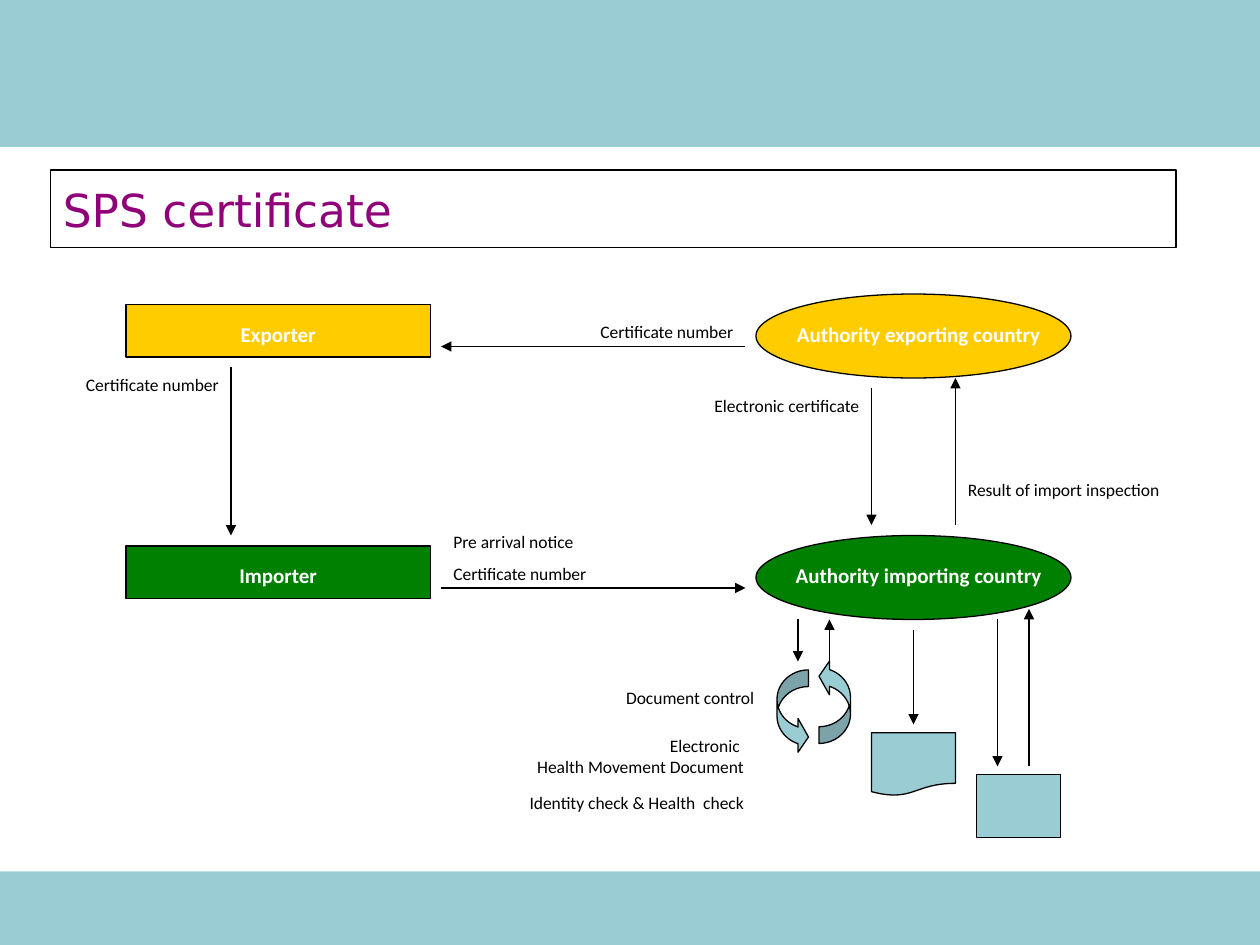
from lxml import etree
from pptx import Presentation
from pptx.dml.color import RGBColor
from pptx.enum.shapes import MSO_CONNECTOR, MSO_SHAPE
from pptx.enum.text import MSO_ANCHOR, MSO_AUTO_SIZE, PP_ALIGN
from pptx.oxml.ns import qn
from pptx.util import Inches, Pt

RECTANGLE, OVAL = MSO_SHAPE.RECTANGLE, MSO_SHAPE.OVAL
CURVED_ARROW = MSO_SHAPE.CURVED_RIGHT_ARROW
DOCUMENT, PROCESS = MSO_SHAPE.FLOWCHART_DOCUMENT, MSO_SHAPE.FLOWCHART_PROCESS
STRAIGHT = MSO_CONNECTOR.STRAIGHT
LEFT, CENTER, RIGHT = PP_ALIGN.LEFT, PP_ALIGN.CENTER, PP_ALIGN.RIGHT
MIDDLE, FIT_SHAPE = MSO_ANCHOR.MIDDLE, MSO_AUTO_SIZE.SHAPE_TO_FIT_TEXT

COLORS = {
    "band": "9ACCD4", "export": "FFCC00", "import": "008000",
    "ink": "000000", "paper": "FFFFFF", "title": "900079",
}
COLORS = {name: RGBColor.from_string(code) for name, code in COLORS.items()}

deck = Presentation()
deck.slide_width, deck.slide_height = Inches(10), Inches(7.5)
page = deck.slides.add_slide(deck.slide_layouts[6])
GRID = deck.slide_width / 120  # 120 columns by 90 rows


def add_box(kind, area, fill, outlined=True):
    box = page.shapes.add_shape(kind, *[round(n * GRID) for n in area])
    box.shadow.inherit = False
    box.fill.solid()
    box.fill.fore_color.rgb = COLORS[fill]
    if outlined:
        box.line.color.rgb = COLORS["ink"]
        box.line.width = Pt(0.75)
    else:
        box.line.fill.background()
    return box


def write(box, text, align, size, color, font="Calibri", bold=False):
    frame = box.text_frame
    frame.word_wrap = True
    frame.text = text
    para = frame.paragraphs[0]
    para.alignment = align
    for span in para.runs:
        span.font.name, span.font.size, span.font.bold = font, Pt(size), bold
        span.font.color.rgb = COLORS[color]


# Bands at the top and bottom
for top, height in ((0, 14), (83, 7)):
    add_box(RECTANGLE, (0, top, 120, height), "band", outlined=False)

# Title
title = add_box(RECTANGLE, (4.8, 16.2, 107.2, 7.4), "paper")
title.text_frame.vertical_anchor = MIDDLE
write(title, "SPS certificate", LEFT, 26, "title", "DejaVu Sans")

# Traders on the left, authorities on the right
for row, color in ((28, "export"), (51, "import")):
    add_box(RECTANGLE, (12, row + 1, 29, 5), color)
    add_box(OVAL, (72, row, 30, 8), color)

# Names of the parties, then labels: text, column, row, width, alignment
names = [
    ("Exporter", 12, 30, 29, CENTER),
    ("Importer", 12, 53, 29, CENTER),
    ("Authority exporting country", 73, 30, 29, CENTER),
    ("Authority importing country", 73, 53, 29, CENTER),
]
labels = [
    ("Certificate number", 47, 30, 24, RIGHT),
    ("Certificate number", 4, 35, 18, RIGHT),
    ("Pre arrival notice", 42, 50, 23, LEFT),
    ("Certificate number", 42, 53, 24, LEFT),
    ("Result of import inspection", 91, 45, 25, LEFT),
    ("Electronic certificate", 65, 37, 18, RIGHT),
    ("Document control", 37, 64.8, 36, RIGHT),
    ("Electronic \vHealth Movement Document", 34, 69.4, 38, RIGHT),
    ("Identity check & Health  check", 39, 74.8, 33, RIGHT),
]
for group, size, color, bold in ((names, 12, "paper", True),
                                 (labels, 10, "ink", False)):
    for text, column, row, width, align in group:
        lines = text.count("\v") + 1
        height = 1.2 + lines * size / 5
        area = (column, row, width, height)
        box = page.shapes.add_textbox(*[round(n * GRID) for n in area])
        write(box, text, align, size, color, bold=bold)
        box.text_frame.auto_size = FIT_SHAPE

# Document control cycle
for column, row, turn in ((74, 63.8, 0), (78, 62.8, 180)):
    arrow = add_box(CURVED_ARROW, (column, row, 3, 8), "band")
    arrow.rotation = turn
    for index, value in enumerate((0.53, 1.07, 0.33)):
        arrow.adjustments[index] = value

# Health movement document and identity check
add_box(DOCUMENT, (83, 69.8, 8, 6), "band")
add_box(PROCESS, (93, 73.8, 8, 6), "band")

# Arrows: start column and row, end column and row
flows = [
    (71, 33, 42, 33), (22, 35, 22, 51), (42, 56, 71, 56),
    (83, 37, 83, 50), (91, 50, 91, 36),
    (76, 59, 76, 63), (79, 63, 79, 59), (87, 60, 87, 69),
    (95, 59, 95, 73), (98, 73, 98, 58),
]
for flow in flows:
    line = page.shapes.add_connector(STRAIGHT, *[round(n * GRID) for n in flow])
    line.line.color.rgb = COLORS["ink"]
    line.line.width = Pt(0.75)
    etree.SubElement(line.line._get_or_add_ln(), qn("a:tailEnd"), type="triangle")
    etree.SubElement(line._element.spPr, qn("a:effectLst"))

deck.save("out.pptx")
